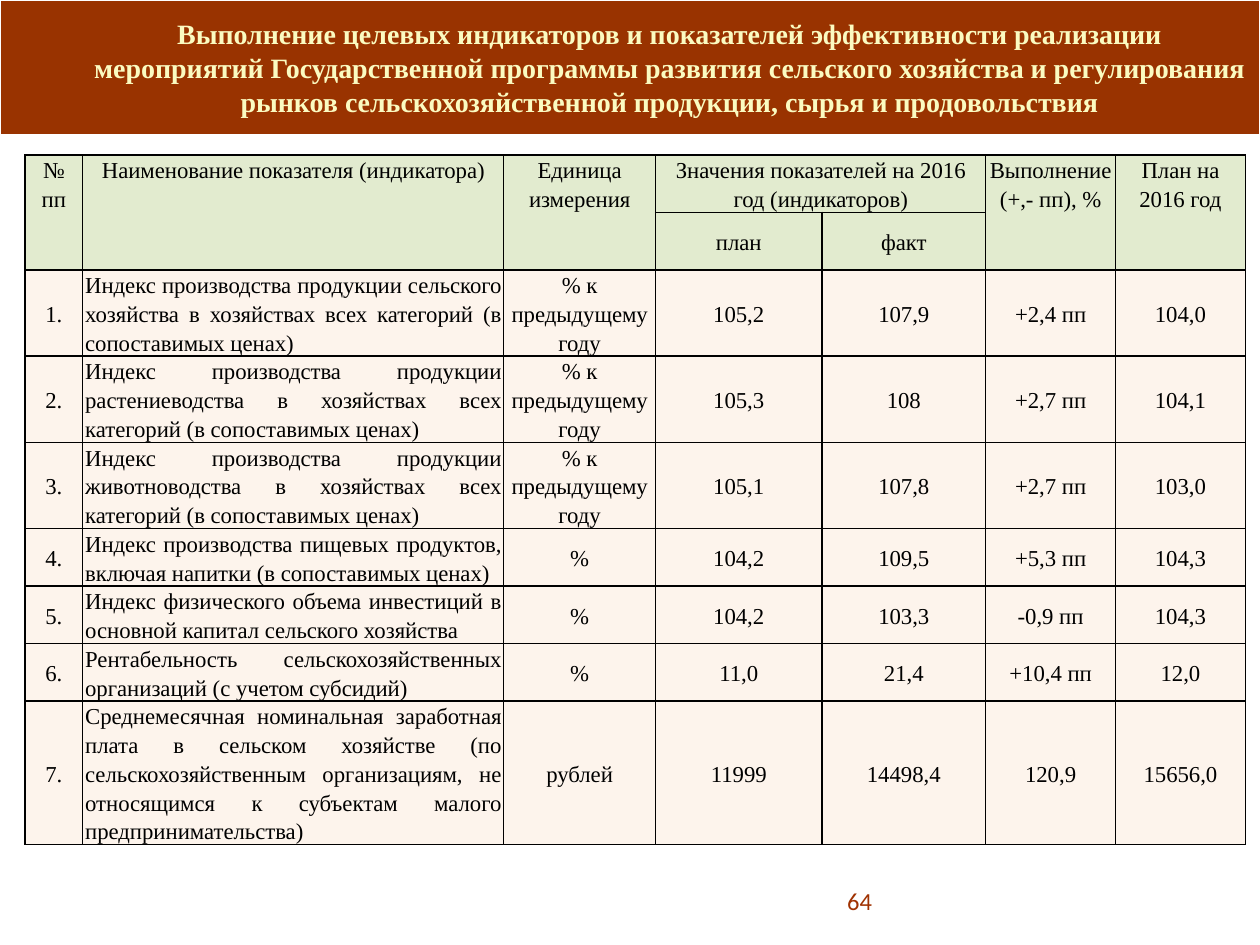
from dataclasses import dataclass

from lxml import etree
from pptx import Presentation
from pptx import util as u
from pptx.dml.color import RGBColor
from pptx.enum import shapes, text
from pptx.oxml import ns

# Content
TITLE = ("Выполнение целевых индикаторов и показателей эффективности реализации "
         "мероприятий Государственной программы развития сельского хозяйства и регулирования "
         "рынков сельскохозяйственной продукции, сырья и продовольствия")
PAGE_NUMBER = "64"
HEADER = [
    ["№\vпп", "Наименование показателя (индикатора)", "Единица измерения",
     "Значения показателей на 2016 год (индикаторов)", "",
     "Выполнение\n(+,- пп), %", "План на 2016 год"],
    ["", "", "", "план", "факт", "", ""],
]
PREVIOUS_YEAR = "% к предыдущему году"
INDICATORS = [  # name, unit, plan, fact, performance, next plan
    ("Индекс производства продукции сельского хозяйства в хозяйствах всех категорий "
     "(в сопоставимых ценах)", PREVIOUS_YEAR, "105,2", "107,9", "+2,4 пп", "104,0"),
    ("Индекс производства продукции растениеводства в хозяйствах всех категорий "
     "(в сопоставимых ценах)", PREVIOUS_YEAR, "105,3", "108", "+2,7 пп", "104,1"),
    ("Индекс производства продукции животноводства в хозяйствах всех категорий "
     "(в сопоставимых ценах)", PREVIOUS_YEAR, "105,1", "107,8", "+2,7 пп", "103,0"),
    ("Индекс производства пищевых продуктов, включая напитки (в сопоставимых ценах)",
     "%", "104,2", "109,5", "+5,3 пп", "104,3"),
    ("Индекс физического объема инвестиций в основной капитал сельского хозяйства",
     "%", "104,2", "103,3", "-0,9 пп", "104,3"),
    ("Рентабельность сельскохозяйственных организаций (с учетом субсидий)",
     "%", "11,0", "21,4", "+10,4 пп", "12,0"),
    ("Среднемесячная номинальная заработная плата в сельском хозяйстве "
     "(по сельскохозяйственным организациям, не относящимся к субъектам малого "
     "предпринимательства)", "рублей", "11999", "14498,4", "120,9", "15656,0"),
]
ROWS = HEADER + [[f"{number}.", *indicator]
                 for number, indicator in enumerate(INDICATORS, 1)]

# Layout in points
SLIDE_WIDTH, SLIDE_HEIGHT = 720, 540
BAND_HEIGHT = 77
TITLE_LEFT = 42.5
TABLE_LEFT, TABLE_TOP = 14.2, 88.5
COLUMN_WIDTHS = [33.1, 240.5, 86.9, 95, 93.6, 74.2, 74.2]
LINES_PER_ROW = [2, 2, 3, 3, 3, 2, 2, 2, 5]
LINE_HEIGHT = 16.4
MERGED = [((0, column), (1, column)) for column in (0, 1, 2, 5, 6)] + [((0, 3), (0, 4))]
NAME_COLUMN = 1


@dataclass(frozen=True)
class Theme:
    band: str = "993300"
    band_line: str = "FFFFFF"
    title: str = "FBFBC1"
    ink: str = "000000"
    header_fill: tuple = ("C3D69B", 48)
    body_fill: tuple = ("FDEADA", 50)
    number: str = "A03202"
    font: str = "Times New Roman"
    number_font: str = "Calibri"
    title_size: int = 16
    table_size: int = 13
    number_size: int = 14


THEME = Theme()


def rgb(value):
    return RGBColor.from_string(value)


def set_font(font, name, size, color, bold=False):
    font.name, font.size, font.bold = name, u.Pt(size), bold
    font.color.rgb = rgb(color)


def set_margins(box, left, top, right, bottom):
    box.margin_left, box.margin_top = u.Pt(left), u.Pt(top)
    box.margin_right, box.margin_bottom = u.Pt(right), u.Pt(bottom)


def add_band(slide):
    band = slide.shapes.add_shape(shapes.MSO_SHAPE.RECTANGLE, 0, 0,
                                  u.Pt(SLIDE_WIDTH), u.Pt(BAND_HEIGHT))
    band.shadow.inherit = False
    band.fill.solid()
    band.fill.fore_color.rgb = rgb(THEME.band)
    band.line.color.rgb = rgb(THEME.band_line)
    band.line.width = u.Pt(0.75)


def add_title(slide):
    shape = slide.shapes.add_shape(
        shapes.MSO_SHAPE.ROUNDED_RECTANGLE, u.Pt(TITLE_LEFT), 0,
        u.Pt(SLIDE_WIDTH - TITLE_LEFT), u.Pt(BAND_HEIGHT))
    shape.adjustments[0] = 0.12
    shape.shadow.inherit = False
    shape.fill.background()
    shape.line.fill.background()
    frame = shape.text_frame
    frame.word_wrap = True
    frame.vertical_anchor = text.MSO_ANCHOR.MIDDLE
    set_margins(frame, 7.2, 6.5, 4.3, 6.5)
    paragraph = frame.paragraphs[0]
    paragraph.alignment = text.PP_ALIGN.CENTER
    run = paragraph.add_run()
    run.text = TITLE
    set_font(run.font, THEME.font, THEME.title_size, THEME.title, bold=True)
    # Soft text shadow, placed right after the colour
    effects = etree.fromstring(
        f'<a:effectLst {ns.nsdecls("a")}><a:outerShdw blurRad="38100" dist="38100" '
        'dir="2700000"><a:srgbClr val="000000"><a:alpha val="43000"/></a:srgbClr>'
        '</a:outerShdw></a:effectLst>')
    run.font.fill._xPr.find(ns.qn("a:solidFill")).addnext(effects)


def style_cell(cell, fill):
    properties = cell._tc.get_or_add_tcPr()
    for side in ("lnL", "lnR", "lnT", "lnB"):
        properties.append(etree.fromstring(
            f'<a:{side} {ns.nsdecls("a")} w="{u.Pt(1)}"><a:solidFill>'
            f'<a:srgbClr val="{THEME.ink}"/></a:solidFill></a:{side}>'))
    color, opacity = fill
    cell.fill.solid()
    cell.fill.fore_color.rgb = rgb(color)
    color_element = properties.find(ns.qn("a:solidFill")).find(ns.qn("a:srgbClr"))
    etree.SubElement(color_element, ns.qn("a:alpha"), val=str(opacity * 1000))
    set_margins(cell, 1.4, 0, 1.4, 0)


def add_indicator_table(slide):
    heights = [lines * LINE_HEIGHT for lines in LINES_PER_ROW]
    table = slide.shapes.add_table(
        len(ROWS), len(COLUMN_WIDTHS), u.Pt(TABLE_LEFT), u.Pt(TABLE_TOP),
        u.Pt(sum(COLUMN_WIDTHS)), u.Pt(sum(heights))).table
    for column, width in zip(table.columns, COLUMN_WIDTHS):
        column.width = u.Pt(width)
    for row, height in zip(table.rows, heights):
        row.height = u.Pt(height)
    for first, last in MERGED:
        table.cell(*first).merge(table.cell(*last))

    for row_index, values in enumerate(ROWS):
        is_header = row_index < len(HEADER)
        for column_index, value in enumerate(values):
            cell = table.cell(row_index, column_index)
            style_cell(cell, THEME.header_fill if is_header else THEME.body_fill)
            cell.vertical_anchor = (text.MSO_ANCHOR.TOP if row_index == 0
                                    else text.MSO_ANCHOR.MIDDLE)
            cell.text_frame.text = value
            justified = column_index == NAME_COLUMN and not is_header
            for paragraph in cell.text_frame.paragraphs:
                paragraph.alignment = (text.PP_ALIGN.JUSTIFY if justified
                                       else text.PP_ALIGN.CENTER)
                paragraph.line_spacing = 1.15
                set_font(paragraph.font, THEME.font, THEME.table_size, THEME.ink)


def add_page_number(slide):
    frame = slide.shapes.add_textbox(u.Pt(422.6), u.Pt(500.4),
                                     u.Pt(82.8), u.Pt(28.8)).text_frame
    frame.word_wrap = True
    frame.vertical_anchor = text.MSO_ANCHOR.MIDDLE
    paragraph = frame.paragraphs[0]
    paragraph.text = PAGE_NUMBER
    paragraph.alignment = text.PP_ALIGN.RIGHT
    set_font(paragraph.font, THEME.number_font, THEME.number_size, THEME.number)


def main():
    presentation = Presentation()
    presentation.slide_width = u.Pt(SLIDE_WIDTH)
    presentation.slide_height = u.Pt(SLIDE_HEIGHT)
    slide = presentation.slides.add_slide(presentation.slide_layouts[6])
    add_band(slide)
    add_title(slide)
    add_indicator_table(slide)
    add_page_number(slide)
    presentation.save("out.pptx")


if __name__ == "__main__":
    main()
